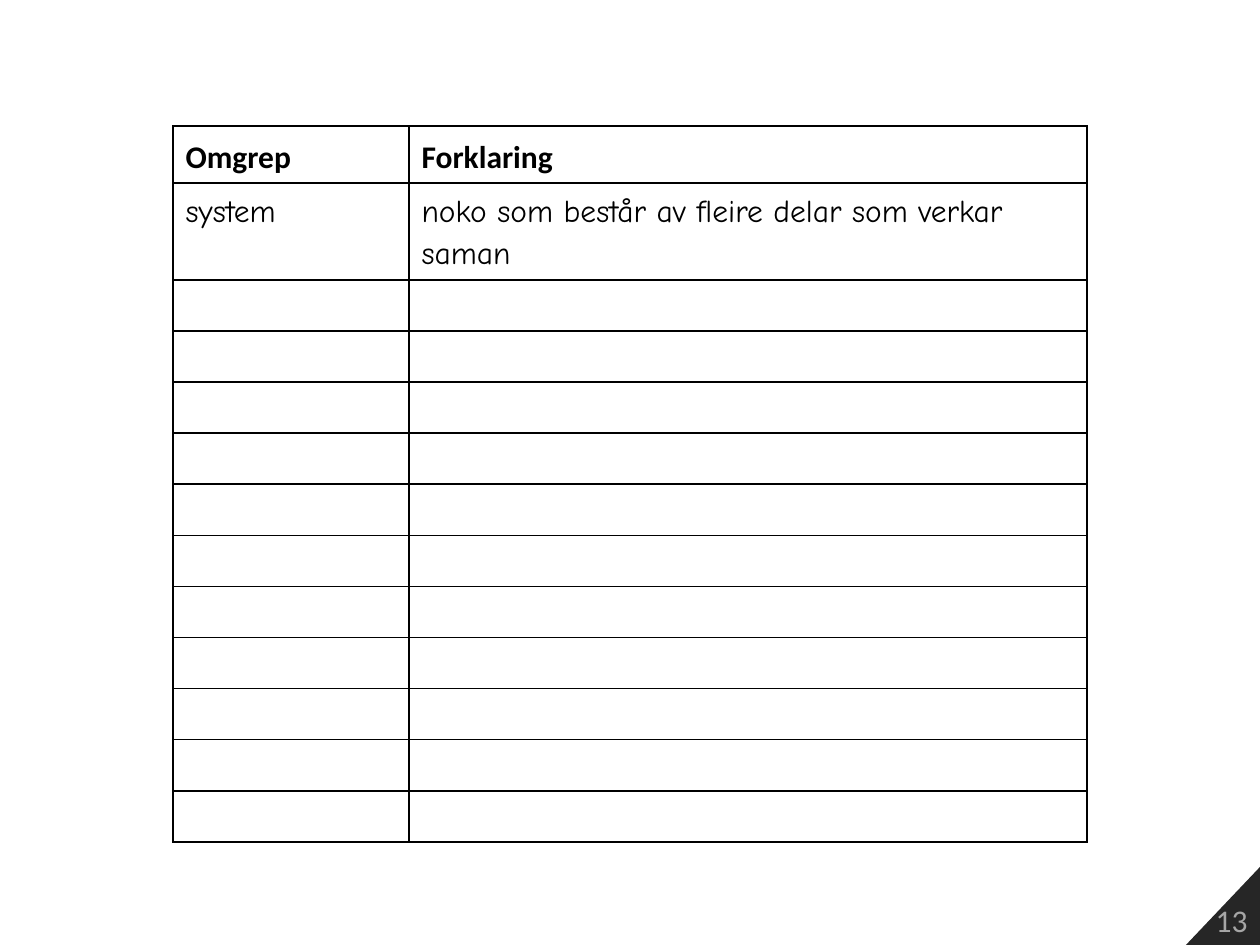
from dataclasses import dataclass

from lxml.etree import SubElement
from pptx import Presentation
from pptx.dml.color import RGBColor
from pptx.enum.text import MSO_ANCHOR as Anchor, PP_ALIGN as Align
from pptx.oxml.ns import qn
from pptx.util import Emu, Pt

EMU_PER_PX = 914400 / 126


@dataclass(frozen=True)
class Theme:
    """Colours, fonts and type sizes of the slide."""

    ink: str = "000000"
    corner: str = "262626"
    page_number: str = "A6A6A6"
    heading_font: str = "Calibri"
    body_font: str = "Comic Neue"
    text_size: int = 18
    border_width: int = 1
    line_spacing: float = 1.15


THEME = Theme()
HEADINGS = ("Omgrep", "Forklaring")
TERMS = (("system", "noko som består av fleire delar som verkar saman"),)
EMPTY_ROWS = 11
COLUMN_WIDTHS = (236, 678)
ROW_HEIGHTS = (56, 97) + (51,) * EMPTY_ROWS


def px(length):
    """Turn a length in pixels into EMU."""
    return Emu(round(length * EMU_PER_PX))


def format_text(para, font, colour, bold=False):
    """Format every run of a paragraph."""
    for run in para.runs:
        run.font.name = font
        run.font.size = Pt(THEME.text_size)
        run.font.bold = bold
        run.font.color.rgb = RGBColor.from_string(colour)


def add_borders(cell):
    """Draw a solid line along all four sides of a cell."""
    properties = cell._tc.get_or_add_tcPr()
    for position, side in enumerate(("lnL", "lnR", "lnT", "lnB")):
        line = SubElement(properties, qn(f"a:{side}"), w=str(Pt(THEME.border_width)))
        fill = SubElement(line, qn("a:solidFill"))
        SubElement(fill, qn("a:srgbClr"), val=THEME.ink)
        properties.insert(position, line)


def fill_cell(cell, text, is_heading):
    """Style a cell and write its text, if it has any."""
    cell.fill.background()
    add_borders(cell)
    if not text:
        return
    cell.text_frame.text = text
    para = cell.text_frame.paragraphs[0]
    para.line_spacing = THEME.line_spacing
    if is_heading:
        cell.vertical_anchor = Anchor.MIDDLE
    font = THEME.heading_font if is_heading else THEME.body_font
    format_text(para, font, THEME.ink, bold=is_heading)


def add_glossary(page, left, top):
    """Add the table of terms with empty rows to fill in."""
    rows = (HEADINGS, *TERMS) + (("", ""),) * EMPTY_ROWS
    frame = page.shapes.add_table(
        len(rows), len(HEADINGS), px(left), px(top),
        px(sum(COLUMN_WIDTHS)), px(sum(ROW_HEIGHTS)))
    table = frame.table
    table.first_row = table.horz_banding = False
    for column, width in zip(table.columns, COLUMN_WIDTHS):
        column.width = px(width)
    for row_index, (row, height, texts) in enumerate(zip(table.rows, ROW_HEIGHTS, rows)):
        row.height = px(height)
        for cell, text in zip(row.cells, texts):
            fill_cell(cell, text, is_heading=row_index == 0)


def add_page_corner(page, number, left, top, right, bottom):
    """Add the dark corner triangle that carries the page number."""
    builder = page.shapes.build_freeform(px(left), px(bottom))
    builder.add_line_segments([(px(right), px(top)), (px(right), px(bottom))])
    corner = builder.convert_to_shape()
    corner.shadow.inherit = False
    corner.fill.solid()
    corner.fill.fore_color.rgb = RGBColor.from_string(THEME.corner)
    corner.line.fill.background()
    corner.text_frame.text = number
    corner.text_frame.vertical_anchor = Anchor.BOTTOM
    para = corner.text_frame.paragraphs[0]
    para.alignment = Align.RIGHT
    format_text(para, THEME.heading_font, THEME.page_number)


def main():
    """Build the slide and save it."""
    deck = Presentation()
    deck.slide_width, deck.slide_height = px(1260), px(945)
    page = deck.slides.add_slide(deck.slide_layouts[6])
    add_page_corner(page, "13", left=1186, top=867, right=1260, bottom=945)
    add_glossary(page, left=173, top=126)
    deck.save("out.pptx")


if __name__ == "__main__":
    main()
